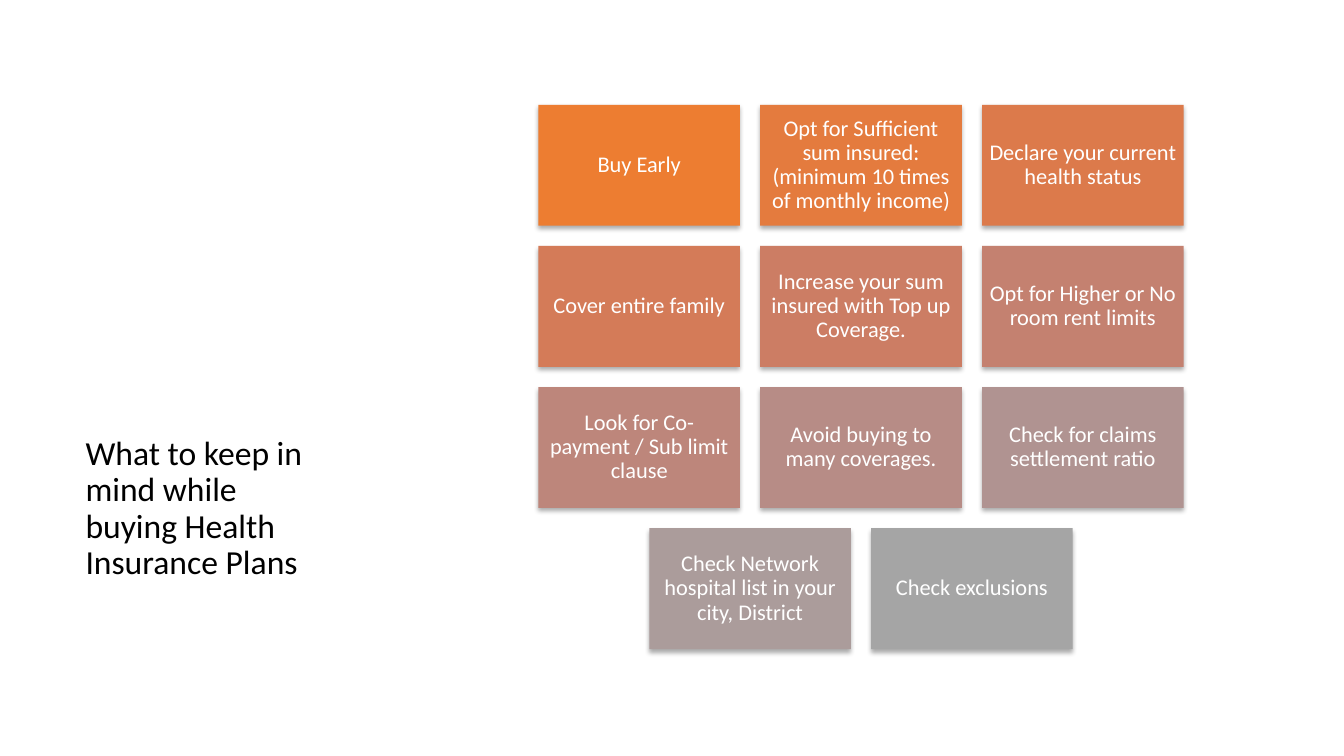
from lxml import etree
from pptx import Presentation
from pptx.dml.color import RGBColor
from pptx.enum.shapes import MSO_SHAPE
from pptx.enum.text import MSO_ANCHOR, PP_ALIGN
from pptx.oxml import parse_xml
from pptx.util import Inches, Pt

RECTANGLE = MSO_SHAPE.RECTANGLE
BOTTOM, MIDDLE = MSO_ANCHOR.BOTTOM, MSO_ANCHOR.MIDDLE
LEFT, CENTER = PP_ALIGN.LEFT, PP_ALIGN.CENTER

TITLE = "What to keep in mind while buying Health Insurance Plans"
ROWS = [
    [
        ("Buy Early", RGBColor(0xED, 0x7D, 0x31)),
        ("Opt for Sufficient sum insured: (minimum 10 times of monthly income)",
         RGBColor(0xE4, 0x7B, 0x3E)),
        ("Declare your current health status", RGBColor(0xDC, 0x7A, 0x4B)),
    ],
    [
        ("Cover entire family", RGBColor(0xD4, 0x7B, 0x58)),
        ("Increase your sum insured with Top up Coverage.", RGBColor(0xCC, 0x7D, 0x64)),
        ("Opt for Higher or No room rent limits", RGBColor(0xC4, 0x81, 0x70)),
    ],
    [
        ("Look for Co-payment / Sub limit clause", RGBColor(0xBD, 0x86, 0x7B)),
        ("Avoid buying to many coverages.", RGBColor(0xB7, 0x8C, 0x86)),
        ("Check for claims settlement ratio", RGBColor(0xB0, 0x93, 0x91)),
    ],
    [
        ("Check Network hospital list in your city, District", RGBColor(0xAB, 0x9C, 0x9B)),
        ("Check exclusions", RGBColor(0xA5, 0xA5, 0xA5)),
    ],
]

BLACK = RGBColor(0, 0, 0)
WHITE = RGBColor(0xFF, 0xFF, 0xFF)
FONT = "Calibri"
GRID_CENTER, GRID_TOP = 8.54, 1.04
CARD_W, CARD_H, GAP = 2, 1.2, 0.2
INSET = Inches(0.07)
SHADOW = (
    '<a:effectLst xmlns:a="http://schemas.openxmlformats.org/drawingml/2006/main">'
    '<a:outerShdw blurRad="44450" dist="27940" dir="5400000" algn="ctr" rotWithShape="0">'
    '<a:srgbClr val="000000"><a:alpha val="32000"/></a:srgbClr>'
    '</a:outerShdw></a:effectLst>'
)


def write(sp, text, size, color, align, anchor):
    tf = sp.text_frame
    tf.word_wrap = True
    tf.vertical_anchor = anchor
    p = tf.paragraphs[0]
    p.text = text
    p.alignment = align
    p.line_spacing = 0.9
    p.font.name = FONT
    p.font.size = Pt(size)
    p.font.color.rgb = color
    return tf


def add_card(s, left, top, text, fill):
    sp = s.shapes.add_shape(RECTANGLE, Inches(left), Inches(top),
                            Inches(CARD_W), Inches(CARD_H))
    sp.fill.solid()
    sp.fill.fore_color.rgb = fill
    sp.line.fill.background()
    sp._element.spPr.append(parse_xml(SHADOW))
    tf = write(sp, text, 16, WHITE, CENTER, MIDDLE)
    tf.margin_left = tf.margin_right = tf.margin_top = tf.margin_bottom = INSET


def main():
    prs = Presentation()
    prs.slide_width, prs.slide_height = Inches(13.33), Inches(7.5)
    s = prs.slides.add_slide(prs.slide_layouts[6])
    title = s.shapes.add_textbox(Inches(0.75), Inches(0.48), Inches(2.54), Inches(5.34))
    write(title, TITLE, 24, BLACK, LEFT, BOTTOM)
    for row, cards in enumerate(ROWS):
        row_width = len(cards) * (CARD_W + GAP) - GAP
        row_left = GRID_CENTER - row_width / 2
        top = GRID_TOP + row * (CARD_H + GAP)
        for col, (text, fill) in enumerate(cards):
            add_card(s, row_left + col * (CARD_W + GAP), top, text, fill)
    prs.save("out.pptx")


if __name__ == "__main__":
    main()
